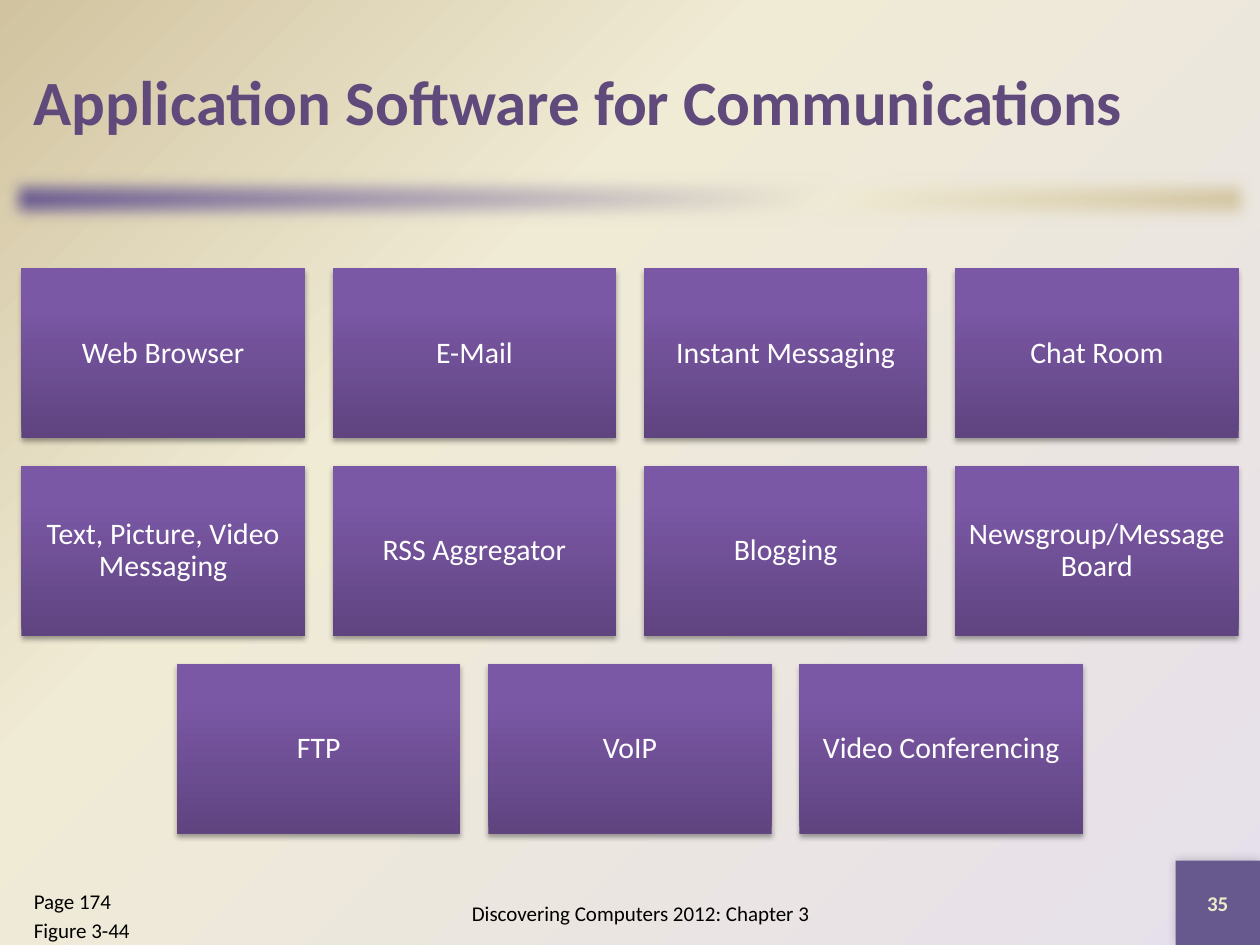
from pptx import Presentation
from pptx.dml.color import RGBColor
from pptx.enum.shapes import MSO_SHAPE
from pptx.enum.text import MSO_ANCHOR, PP_ALIGN
from pptx.oxml import parse_xml
from pptx.oxml.ns import nsdecls, qn
from pptx.util import Inches, Pt

RECT = MSO_SHAPE.RECTANGLE
TOP, MIDDLE = MSO_ANCHOR.TOP, MSO_ANCHOR.MIDDLE
LEFT, CENTER = PP_ALIGN.LEFT, PP_ALIGN.CENTER
FONT = "Calibri"
COLORS = {
    "title": "604A7B", "corner": "67588E", "number": "EEEBCA",
    "white": "FFFFFF", "black": "000000",
    "lilac": "E6E0EC", "cream": "F0EBD5", "sand": "D1C39F",
    "deep": "5F4480", "mid": "7B58A6", "light": "7C57A8",
}
BACK = [(0, "lilac"), (65, "cream"), (100, "sand")]
BAR = [(0, "corner"), (65, "cream"), (100, "sand")]
TILE = [(0, "deep"), (80, "mid"), (100, "light")]
ROWS = [
    ["Web Browser", "E-Mail", "Instant Messaging", "Chat Room"],
    ["Text, Picture, Video Messaging", "RSS Aggregator", "Blogging",
     "Newsgroup/Message Board"],
    ["FTP", "VoIP", "Video Conferencing"],
]
WIDTH, HEIGHT, GAP = 2.25, 1.35, 0.22


def color(name):
    """Return a named color."""
    return RGBColor.from_string(COLORS[name])


def linear(angle):
    """Return the XML of a linear gradient direction."""
    return f'<a:lin ang="{angle * 60000}" scaled="0"/>'


def blend(props, stops, course):
    """Replace the solid fill in props by a gradient."""
    marks = "".join(
        f'<a:gs pos="{pos * 1000}"><a:srgbClr val="{COLORS[name]}"/></a:gs>'
        for pos, name in stops)
    grad = parse_xml(f'<a:gradFill {nsdecls("a")} rotWithShape="1">'
                     f'<a:gsLst>{marks}</a:gsLst>{course}</a:gradFill>')
    props.replace(props.find(qn("a:solidFill")), grad)


def add_effect(shape, xml):
    """Append one effect to a shape."""
    shape._element.spPr.find(qn("a:effectLst")).append(parse_xml(xml))


def add_shadow(shape, alpha, blur, dist, angle):
    """Give a shape a soft black shadow."""
    add_effect(shape, f'<a:outerShdw {nsdecls("a")} blurRad="{Pt(blur)}" '
               f'dist="{Pt(dist)}" dir="{angle * 60000}" algn="ctr" '
               f'rotWithShape="0"><a:srgbClr val="{COLORS["black"]}">'
               f'<a:alpha val="{alpha * 1000}"/></a:srgbClr></a:outerShdw>')


def add_block(slide, box, fill="corner"):
    """Add a plain rectangle without outline."""
    shape = slide.shapes.add_shape(RECT, *map(Inches, box))
    shape.shadow.inherit = False
    shape.fill.solid()
    shape.fill.fore_color.rgb = color(fill)
    shape.line.fill.background()
    return shape


def write(shape, lines, size, tint, align=CENTER, anchor=MIDDLE, bold=False):
    """Write lines into a shape and return its paragraphs."""
    frame = shape.text_frame
    frame.word_wrap = True
    frame.vertical_anchor = anchor
    frame.text = "\n".join(lines)
    for par in frame.paragraphs:
        par.alignment = align
        par.font.name = FONT
        par.font.size = Pt(size)
        par.font.bold = bold
        par.font.color.rgb = color(tint)
    return frame.paragraphs


def add_text(slide, box, *args, **style):
    """Add a text box and return its paragraphs."""
    return write(slide.shapes.add_textbox(*map(Inches, box)), *args, **style)


def add_tile(slide, left, top, label):
    """Add one shaded tile with its label."""
    tile = add_block(slide, (left, top, WIDTH, HEIGHT))
    blend(tile._element.spPr, TILE, linear(270))
    add_shadow(tile, 35, 3.1, 1.8, 90)
    frame = tile.text_frame
    frame.margin_left = frame.margin_right = Inches(0.07)
    frame.margin_top = frame.margin_bottom = Inches(0.07)
    write(tile, [label], 17, "white")[0].line_spacing = 0.9


def add_tiles(slide):
    """Lay out the rows of tiles, each centred on the slide."""
    for row, labels in enumerate(ROWS):
        span = len(labels) * (WIDTH + GAP) - GAP
        for col, label in enumerate(labels):
            left = (10 - span) / 2 + col * (WIDTH + GAP)
            add_tile(slide, left, 2.13 + row * (HEIGHT + GAP), label)


def add_back(slide):
    """Paint the background and the soft bar under the title."""
    fill = slide.background.fill
    fill.solid()
    fill.fore_color.rgb = color("cream")
    blend(slide.element.find(".//" + qn("p:bgPr")), BACK,
          '<a:path path="circle"><a:fillToRect l="100000" t="100000"/></a:path>')
    bar = add_block(slide, (0, 1.33, 10, 0.5))
    blend(bar._element.spPr, BAR, linear(45))
    add_effect(bar, f'<a:softEdge {nsdecls("a")} rad="{Pt(10)}"/>')


def add_foot(slide):
    """Add the page reference, the footer and the slide number."""
    add_text(slide, (3, 7, 4.17, 0.5),
             ["Discovering Computers 2012: Chapter 3"], 12, "black")
    corner = add_block(slide, (9.33, 6.83, 0.67, 0.67))
    add_shadow(corner, 20, 6, 0, 225)
    write(corner, ["35"], 12, "number", bold=True)
    pars = add_text(slide, (0.17, 7, 1.83, 0.5), ["Page 174", "Figure 3-44"],
                    12, "black", align=LEFT, anchor=TOP)
    pars[1].space_before = Pt(2.4)


def main():
    """Build and save the slide."""
    deck = Presentation()
    deck.slide_width, deck.slide_height = Inches(10), Inches(7.5)
    slide = deck.slides.add_slide(deck.slide_layouts[6])
    add_back(slide)
    add_text(slide, (0.17, 0.17, 9.67, 1.25),
             ["Application Software for Communications"], 36, "title",
             align=LEFT, bold=True)
    add_tiles(slide)
    add_foot(slide)
    deck.save("out.pptx")


if __name__ == "__main__":
    main()
